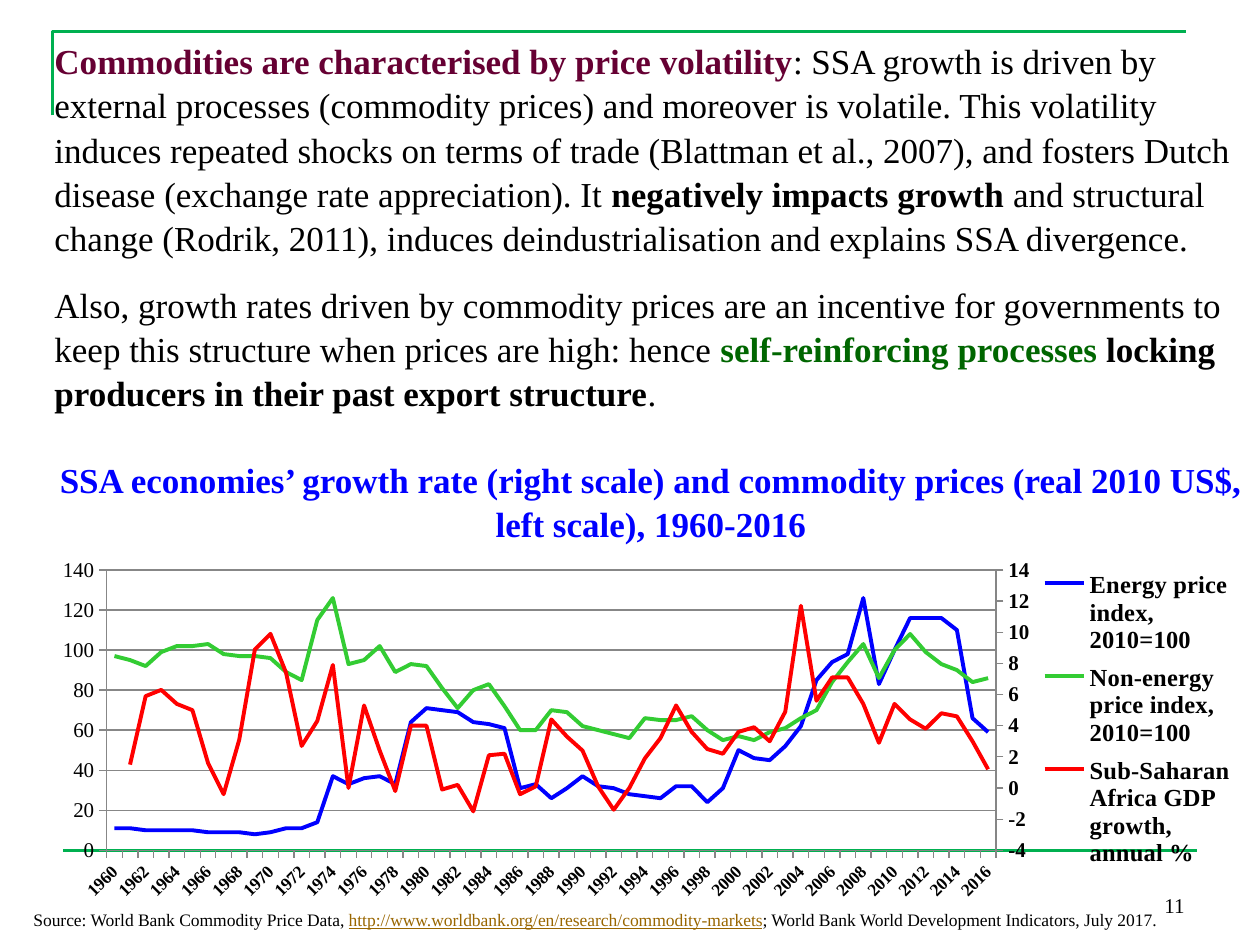
"""Build the slide on commodity price volatility and growth in Sub-Saharan Africa."""
import copy

import lxml.etree
import pptx
import pptx.chart.axis
import pptx.chart.data
import pptx.dml.color
import pptx.enum.chart
import pptx.enum.shapes
import pptx.enum.text
import pptx.oxml.ns
import pptx.util

Pt = pptx.util.Pt
qn = pptx.oxml.ns.qn
FONT = "Times New Roman"
COLOURS = {
    "black": "000000", "frame": "00B050", "plum": "660033", "forest": "006600",
    "blue": "0000FF", "lime": "33CC33", "red": "FF0000", "link": "996600", "grid": "868686",
}
RGB = {name: pptx.dml.color.RGBColor.from_string(value) for name, value in COLOURS.items()}
ALIGN = pptx.enum.text.PP_ALIGN
ANCHOR = pptx.enum.text.MSO_ANCHOR


def add_text(page, place, paragraphs, size, align=ALIGN.LEFT, anchor=ANCHOR.TOP, spacing=1.0):
    """Add a text box; a paragraph is (space before, alignment or None, runs)."""
    box = page.shapes.add_textbox(*map(Pt, place))
    frame = box.text_frame
    frame.word_wrap = True
    frame.vertical_anchor = anchor
    for index, (before, own_align, runs) in enumerate(paragraphs):
        para = frame.paragraphs[0] if index == 0 else frame.add_paragraph()
        para.alignment = own_align or align
        para.space_before = Pt(before)
        para.line_spacing = spacing
        for text, colour, style in runs:
            span = para.add_run()
            span.text = text
            span.font.name = FONT
            span.font.size = Pt(size)
            span.font.color.rgb = RGB[colour]
            span.font.bold = style == "bold"
            span.font.underline = style == "underline"


def set_layout(parent, position, target, **fractions):
    """Place a chart part by fractions of the chart area."""
    for old in parent.findall(qn("c:layout")):
        parent.remove(old)
    layout = lxml.etree.Element(qn("c:layout"))
    manual = lxml.etree.SubElement(layout, qn("c:manualLayout"))
    settings = {"xMode": "edge", "yMode": "edge", **fractions}
    if target:
        settings = {"layoutTarget": target, **settings}
    for tag, value in settings.items():
        lxml.etree.SubElement(manual, qn("c:" + tag)).set("val", str(value))
    parent.insert(position, layout)


deck = pptx.Presentation()
deck.slide_width, deck.slide_height = Pt(720), Pt(540)
page = deck.slides.add_slide(deck.slide_layouts[6])

builder = page.shapes.build_freeform(Pt(30), Pt(66), scale=1.0)
builder.add_line_segments([(Pt(30), Pt(18)), (Pt(678), Pt(18))], close=False)
corner = builder.convert_to_shape()
corner.shadow.inherit = False
corner.fill.background()
rule = page.shapes.add_connector(
    pptx.enum.shapes.MSO_CONNECTOR.STRAIGHT, Pt(36), Pt(486), Pt(684), Pt(486))
lxml.etree.SubElement(rule._element.spPr, qn("a:effectLst"))
for outline in (corner, rule):
    outline.line.color.rgb = RGB["frame"]
    outline.line.width = Pt(1.5)

add_text(page, (516, 492, 168, 36), [(0, None, [("11", "black", "")])], 12,
         align=ALIGN.RIGHT, anchor=ANCHOR.BOTTOM)

series_table = [
    ("Energy price index, 2010=100", "blue",
     [11, 11, 10, 10, 10, 10, 9, 9, 9, 8, 9, 11, 11, 14, 37, 33, 36, 37, 33, 64, 71, 70, 69, 64,
      63, 61, 31, 33, 26, 31, 37, 32, 31, 28, 27, 26, 32, 32, 24, 31, 50, 46, 45, 52, 62, 85, 94,
      98, 126, 83, 100, 116, 116, 116, 110, 66, 59]),
    ("Non-energy price index, 2010=100", "lime",
     [97, 95, 92, 99, 102, 102, 103, 98, 97, 97, 96, 89, 85, 115, 126, 93, 95, 102, 89, 93, 92,
      81, 71, 80, 83, 72, 60, 60, 70, 69, 62, 60, 58, 56, 66, 65, 65, 67, 60, 55, 57, 55, 59, 61,
      66, 70, 84, 94, 103, 86, 100, 108, 99, 93, 90, 84, 86]),
    ("Sub-Saharan Africa GDP growth, annual %", "red",
     [None, 1.5, 5.9, 6.3, 5.4, 5, 1.6, -0.4, 3.1, 8.9, 9.9, 7.4, 2.7, 4.3, 7.9, 0, 5.3, 2.4,
      -0.2, 4, 4, -0.1, 0.2, -1.5, 2.1, 2.2, -0.4, 0.1, 4.4, 3.3, 2.4, 0.1, -1.4, 0, 1.9, 3.2,
      5.3, 3.6, 2.5, 2.2, 3.6, 3.9, 3, 4.9, 11.7, 5.6, 7.1, 7.1, 5.4, 2.9, 5.4, 4.4, 3.8, 4.8,
      4.6, 3, 1.2]),
]
data = pptx.chart.data.CategoryChartData()
data.categories = [str(year) for year in range(1960, 2017)]
for name, colour, values in series_table:
    data.add_series(name, values)
chart = page.shapes.add_chart(pptx.enum.chart.XL_CHART_TYPE.LINE,
                              Pt(24), Pt(306), Pt(684), Pt(210), data).chart
chart.has_title = False
chart.font.name = FONT
chart.font.size = Pt(12)
chart.font.color.rgb = RGB["black"]
chart.plots[0].vary_by_categories = False
for series, (name, colour, values) in zip(chart.plots[0].series, series_table):
    series.smooth = False
    series.marker.style = pptx.enum.chart.XL_MARKER_STYLE.NONE
    series.format.line.color.rgb = RGB[colour]
    series.format.line.width = Pt(2.25)

chart.has_legend = True
legend = chart.legend
legend.position = pptx.enum.chart.XL_LEGEND_POSITION.RIGHT
legend.include_in_layout = False
legend.font.name = FONT
legend.font.size = Pt(14)
legend.font.bold = True
legend.font.color.rgb = RGB["black"]
set_layout(legend._element, 1, None, x=0.83, y=0.07, w=0.17, h=0.86)

plot_area = chart._chartSpace.chart.plotArea
set_layout(plot_area, 0, "inner", x=0.054, y=0.094, w=0.743, h=0.763)
line_plot = plot_area.find(qn("c:lineChart"))
category_node = plot_area.find(qn("c:catAx"))
value_node = plot_area.find(qn("c:valAx"))

right_plot = copy.deepcopy(line_plot)
line_plot.remove(line_plot.findall(qn("c:ser"))[2])
for surplus in right_plot.findall(qn("c:ser"))[:2]:
    right_plot.remove(surplus)
line_plot.addnext(right_plot)
right_category, right_value = copy.deepcopy(category_node), copy.deepcopy(value_node)
value_node.addnext(right_value)
right_value.addnext(right_category)
for node, own, other in ((right_category, "5001", "5002"), (right_value, "5002", "5001")):
    node.find(qn("c:axId")).set("val", own)
    node.find(qn("c:crossAx")).set("val", other)
for reference, number in zip(right_plot.findall(qn("c:axId")), ("5001", "5002")):
    reference.set("val", number)
right_value.find(qn("c:crosses")).set("val", "max")
right_value.find(qn("c:axPos")).set("val", "r")

left_axis, category_axis = chart.value_axis, chart.category_axis
right_axis = pptx.chart.axis.ValueAxis(right_value)
pptx.chart.axis.CategoryAxis(right_category).visible = False
for axis, size in ((category_axis, 10), (left_axis, 14), (right_axis, 12)):
    axis.major_tick_mark = pptx.enum.chart.XL_TICK_MARK.OUTSIDE
    axis.minor_tick_mark = pptx.enum.chart.XL_TICK_MARK.NONE
    axis.tick_label_position = pptx.enum.chart.XL_TICK_LABEL_POSITION.LOW
    axis.format.line.color.rgb = RGB["grid"]
    axis.format.line.width = Pt(0.75)
    font = axis.tick_labels.font
    font.name, font.size, font.bold = FONT, Pt(size), True
    font.color.rgb = RGB["black"]
right_axis.tick_label_position = pptx.enum.chart.XL_TICK_LABEL_POSITION.NEXT_TO_AXIS
for axis, low, high, step in ((left_axis, 0, 140, 20), (right_axis, -4, 14, 2)):
    axis.minimum_scale, axis.maximum_scale, axis.major_unit = low, high, step
    axis.tick_labels.number_format = "0"
    axis.tick_labels.number_format_is_linked = False
    axis.has_major_gridlines = axis is left_axis
left_axis.major_gridlines.format.line.color.rgb = RGB["grid"]
left_axis.major_gridlines.format.line.width = Pt(0.75)
category_node.find(qn("c:txPr")).find(qn("a:bodyPr")).set("rot", "-2700000")
for tag, skip in (("c:tickLblSkip", "2"), ("c:tickMarkSkip", "1")):
    node = lxml.etree.Element(qn(tag))
    node.set("val", skip)
    category_node.find(qn("c:noMultiLvlLbl")).addprevious(node)

add_text(page, (24, 18, 696, 287), [
    (0, None, [
        ("Commodities are characterised by price volatility", "plum", "bold"),
        (": SSA growth is driven by external processes (commodity prices) and moreover is volatile. "
         "This volatility induces repeated shocks on terms of trade (Blattman et al., 2007), and "
         "fosters Dutch disease (exchange rate appreciation). It ", "black", ""),
        ("negatively impacts growth ", "black", "bold"),
        ("and structural change (Rodrik, 2011), induces deindustrialisation and explains SSA "
         "divergence.", "black", "")]),
    (13.3, None, [
        ("Also, growth rates driven by commodity prices are an incentive for governments to keep "
         "this structure when prices are high: hence ", "black", ""),
        ("self-reinforcing processes ", "forest", "bold"),
        ("locking producers in their past export structure", "black", "bold"),
        (".", "black", "")]),
    (24.1, ALIGN.CENTER, [
        ("SSA economies’ growth rate (right scale) and commodity prices (real 2010 US$, left "
         "scale), 1960-2016", "blue", "bold")]),
], 20, spacing=1.05)

add_text(page, (12, 516, 690, 19.5), [(0, None, [
    ("Source: World Bank Commodity Price Data, ", "black", ""),
    ("http://www.worldbank.org/en/research/commodity-markets", "link", "underline"),
    ("; World Bank World Development Indicators, July 2017.", "black", "")])], 10)

deck.save("out.pptx")
